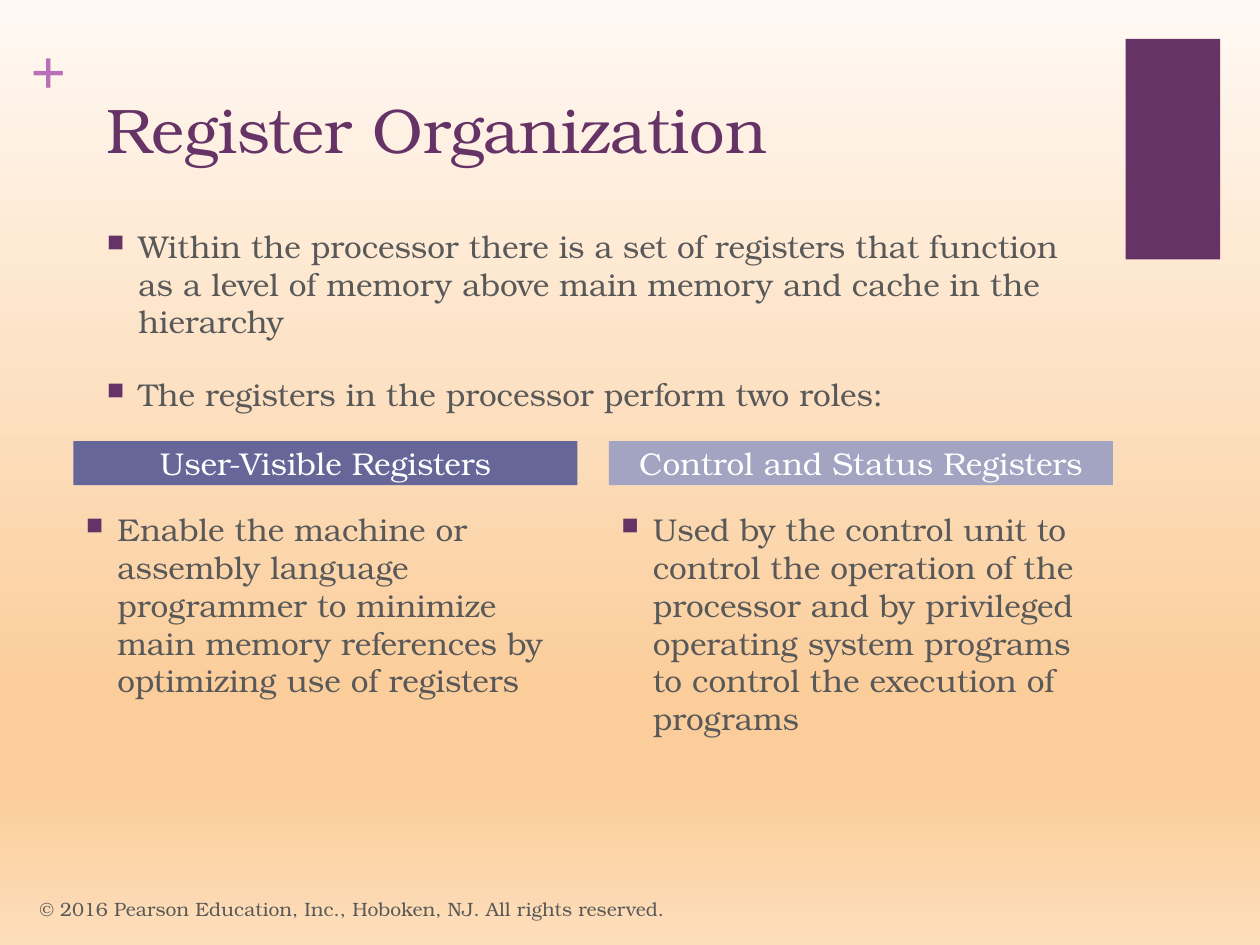
import pptx
import pptx.util
import pptx.dml.color
import pptx.enum.shapes
import pptx.enum.text
import pptx.oxml.ns
import lxml.etree

HUES = {
    "plum": "663366", "pink": "B870B8", "text": "595959", "white": "FFFFFF",
    "slate": "666699", "pale": "A3A3C2",
    "cream": "FFF9F4", "peach": "FBCD9A", "sand": "FDDEBB",
}
FACE = "TeX Gyre Bonum"
qn = pptx.oxml.ns.qn
Pt = pptx.util.Pt
Inches = pptx.util.Inches
mid = pptx.enum.text.MSO_ANCHOR.MIDDLE

deck = pptx.Presentation()
deck.slide_width = Inches(10)
deck.slide_height = Inches(7.5)
cell = deck.slide_width / 120
slide = deck.slides.add_slide(deck.slide_layouts[6])


def place(box, fill=None):
    area = [round(cell * n) for n in box]
    if fill is None:
        return slide.shapes.add_textbox(*area)
    shape = slide.shapes.add_shape(pptx.enum.shapes.MSO_SHAPE.RECTANGLE, *area)
    shape.shadow.inherit = False
    shape.fill.solid()
    shape.fill.fore_color.rgb = pptx.dml.color.RGBColor.from_string(HUES[fill])
    shape.line.fill.background()
    return shape


def write(shape, lines, size, hue, face=FACE, bold=False, list_=False, align="LEFT"):
    frame = shape.text_frame
    frame.word_wrap = True
    frame.text = "\n".join(lines)
    for num, para in enumerate(frame.paragraphs):
        para.alignment = getattr(pptx.enum.text.PP_ALIGN, align)
        if list_:
            if num:
                para.space_before = Pt(20)
            props = para._p.get_or_add_pPr()
            props.set("marL", str(Inches(0.25)))
            props.set("indent", str(-Inches(0.25)))
            tint = lxml.etree.SubElement(props, qn("a:buClr"))
            lxml.etree.SubElement(tint, qn("a:srgbClr"), val=HUES["plum"])
            lxml.etree.SubElement(props, qn("a:buSzPct"), val="75000")
            lxml.etree.SubElement(props, qn("a:buChar"), char="■")
        para.font.size = Pt(size)
        para.font.name = face
        para.font.bold = bold
        para.font.color.rgb = pptx.dml.color.RGBColor.from_string(HUES[hue])
    return frame


back = slide.background.fill
back.gradient()
back.gradient_angle = 270
stops = next(slide.element.iter(qn("a:gsLst")))
for stop in list(stops):
    stops.remove(stop)
for part, hue in [(0, "cream"), (74, "peach"), (83, "peach"), (100, "sand")]:
    stop = lxml.etree.SubElement(stops, qn("a:gs"), pos=str(part * 1000))
    lxml.etree.SubElement(stop, qn("a:srgbClr"), val=HUES[hue])

place((107.2, 3.7, 9, 21), "plum")

plus = write(place((2.9, 3, 3.5, 7.3)), ["+"], 36, "pink", "Times New Roman", True)
plus.margin_left = plus.margin_right = plus.margin_top = plus.margin_bottom = 0

write(place((9, 8, 99, 14.6)), ["Register Organization"], 36, "plum")
write(place((9, 21, 94, 15.5)), [
    "Within the processor there is a set of registers that function as a level "
    "of memory above main memory and cache in the hierarchy",
    "The registers in the processor perform two roles:",
], 18, "text", list_=True)

roles = [
    ("User-Visible Registers", "slate",
     "Enable the machine or assembly language programmer to minimize main "
     "memory references by optimizing use of registers"),
    ("Control and Status Registers", "pale",
     "Used by the control unit to control the operation of the processor and by "
     "privileged operating system programs to control the execution of programs"),
]
for num, (head, hue, body) in enumerate(roles):
    left = 7 + 51 * num
    label = write(place((left, 42, 48, 4.2), hue), [head], 18, "white", align="CENTER")
    label.margin_top = label.margin_bottom = 0
    label.vertical_anchor = mid
    write(place((left, 48, 48, 28.5)), [body], 18, "text", list_=True)

foot = write(place((2.6, 84.2, 80.4, 4.8)), [
    "© 2016 Pearson Education, Inc., Hoboken, NJ. All rights reserved.",
], 11, "text")
foot.vertical_anchor = mid

deck.save("out.pptx")
